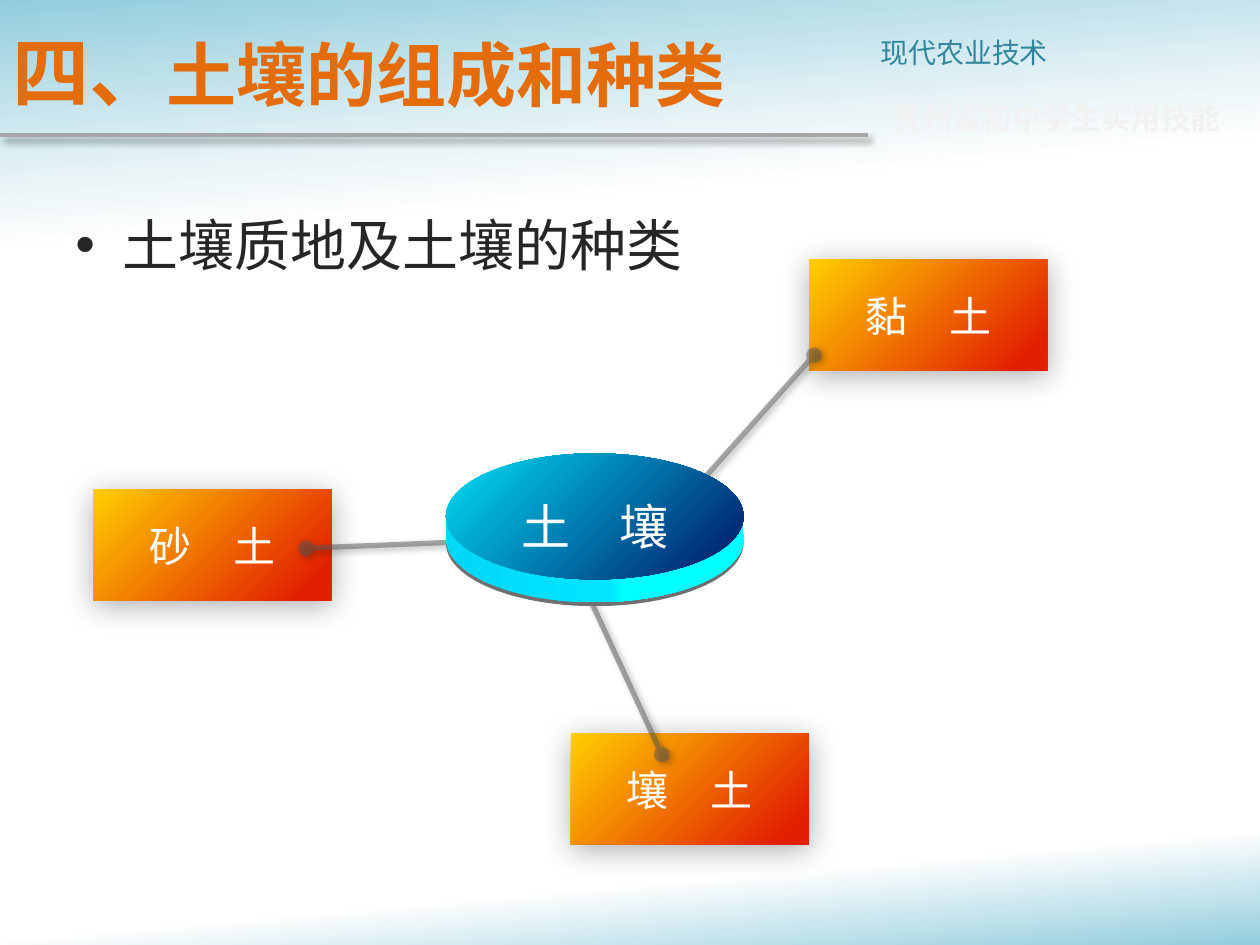
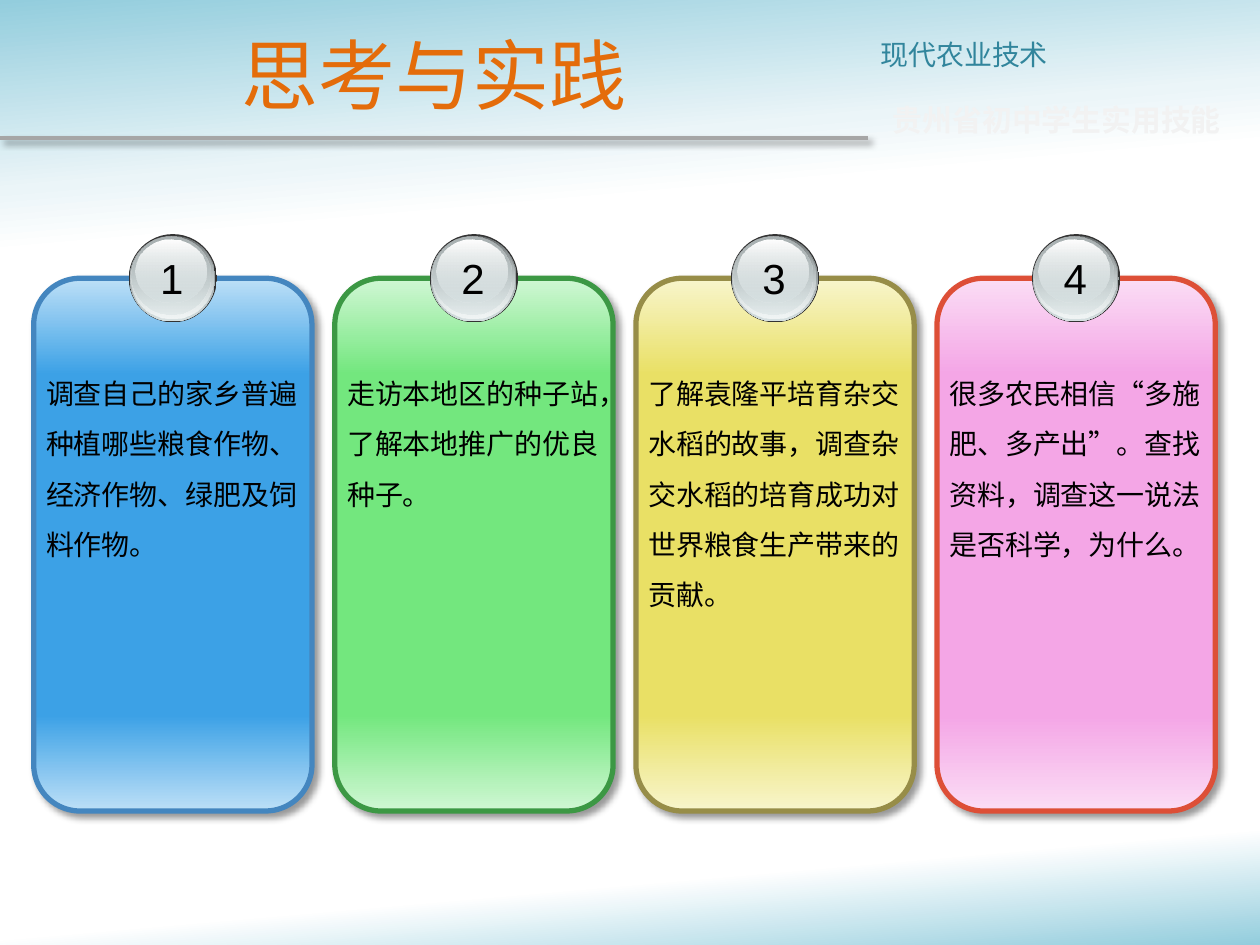
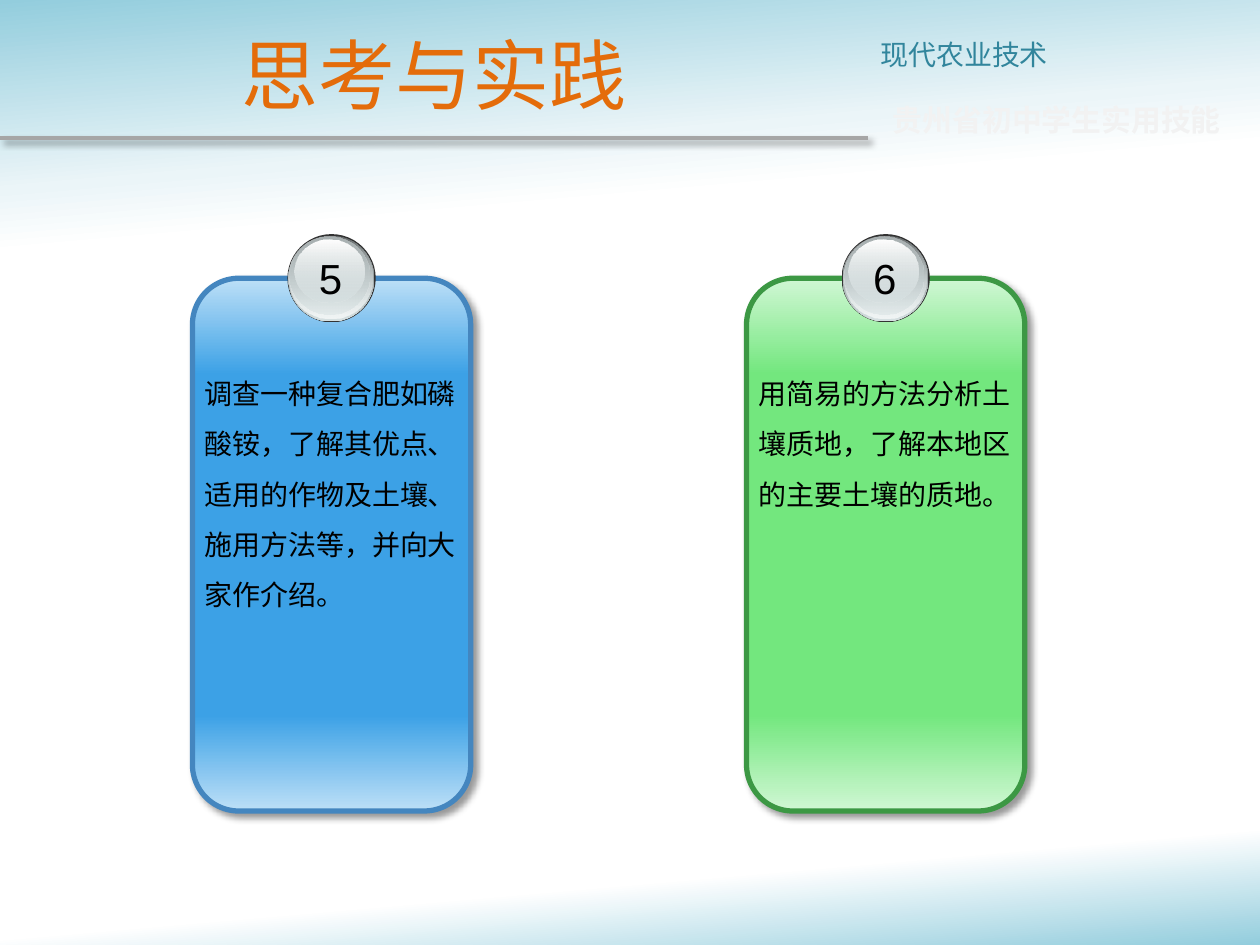
from lxml.etree import SubElement
from pptx import Presentation
from pptx.dml.color import RGBColor
from pptx.enum.shapes import MSO_CONNECTOR, MSO_SHAPE
from pptx.enum.text import MSO_ANCHOR, PP_ALIGN
from pptx.oxml import parse_xml
from pptx.oxml.ns import nsdecls, qn
from pptx.util import Cm, Pt

CJK = "Noto Sans CJK SC"
ORANGE, TEAL, PALE, INK = "E46C0A", "31859C", "F2F2F2", "262626"
WHITE, BLACK, RULE, SPOKE = "FFFFFF", "000000", "A6A6A6", "595959"
SKY = [(0, "93CDDD"), (18, "EBF5F8"), (24, WHITE), (89, WHITE), (100, "93CDDD")]
FIRE = [(0, "FFCF01"), (90, "E22000")]
OCEAN = [(0, "00DFF6"), (90, "002774")]
RIM = [(0, "00D8F8"), (55, "00E4FF"), (60, "00FFFF"), (100, "00FFFF")]
BLUE = ("BDE0F7", "3CA1E6", "4486BF")
GREEN = ("D0F7D4", "73E77E", "3C9844")
YELLOW = ("F8F5CC", "E9E065", "978D48")
PINK = ("FBDDF5", "F4A6E6", "DD4F37")
CARD_W, CARD_H, BADGE = 5.61, 10.74, 1.78
BADGE_LAYERS = [
    (0, 0, 1.78, 1.78, [(0, "333333"), (100, "333333")]),
    (0.02, 0.03, 1.73, 1.73, [(0, "636869"), (100, "D6E1E2")]),
    (0.03, 0.03, 1.68, 1.68, [(0, "D6E1E2", 0), (100, "F1F5F5")]),
    (0.05, 0.05, 1.6, 1.57, [(0, "AAB2B3"), (100, "D6E1E2", 48)]),
    (0.14, 0.1, 1.42, 1.27, [(0, WHITE), (100, "D6E1E2", 38)]),
]


def rgb(value):
    """Turn a hex string into a colour."""
    return RGBColor.from_string(value)


def gradient(fill, holder, stops, angle):
    """Give a shape or background a linear gradient of (position, colour, alpha)."""
    fill.background()
    grad = parse_xml(f'<a:gradFill {nsdecls("a")} rotWithShape="1"><a:gsLst/>'
                     f'<a:lin ang="{angle * 60000}" scaled="0"/></a:gradFill>')
    for pos, color, *alpha in stops:
        gs = SubElement(grad[0], qn("a:gs"), pos=str(pos * 1000))
        clr = SubElement(gs, qn("a:srgbClr"), val=color)
        if alpha:
            SubElement(clr, qn("a:alpha"), val=str(alpha[0] * 1000))
    holder.replace(holder.find(qn("a:noFill")), grad)


def cast_shadow(sp, alpha=0, blur=4, dist=3, angle=45):
    """Replace the theme shadow by a given one, or by none."""
    effects = SubElement(sp.element.spPr, qn("a:effectLst"))
    if alpha:
        shadow = SubElement(effects, qn("a:outerShdw"), blurRad=str(Pt(blur)),
                            dist=str(Pt(dist)), dir=str(angle * 60000),
                            algn="ctr", rotWithShape="0")
        clr = SubElement(shadow, qn("a:srgbClr"), val=BLACK)
        SubElement(clr, qn("a:alpha"), val=str(alpha * 1000))


def add_shape(s, kind, box, stops, angle=90, line=None, shadow=()):
    """Add a gradient-filled preset shape."""
    sp = s.shapes.add_shape(kind, *map(Cm, box))
    gradient(sp.fill, sp.element.spPr, stops, angle)
    if line:
        sp.line.color.rgb = rgb(line)
        sp.line.width = Pt(3)
    else:
        sp.line.fill.background()
    cast_shadow(sp, *shadow)
    return sp


def add_line(s, start, end, color, width, shadow):
    """Add a straight line with a shadow and return it."""
    c = s.shapes.add_connector(MSO_CONNECTOR.STRAIGHT, *map(Cm, start + end))
    c.line.color.rgb = rgb(color)
    c.line.width = Pt(width)
    cast_shadow(c, *shadow)
    return c


def style_run(r, size, color, font=CJK, bold=False):
    """Format one run, East Asian font included."""
    r.font.size = Pt(size)
    r.font.bold = bold
    r.font.color.rgb = rgb(color)
    r.font.name = font
    SubElement(r.font._element, qn("a:ea"), typeface=font)


def add_text(s, box, text, size, color, align=PP_ALIGN.LEFT, font=CJK,
             bold=False, spacing=None, anchor=MSO_ANCHOR.TOP):
    """Add a wrapped text box and return its text frame."""
    tf = s.shapes.add_textbox(*map(Cm, box)).text_frame
    tf.word_wrap = True
    tf.vertical_anchor = anchor
    tf.text = text
    for p in tf.paragraphs:
        p.alignment = align
        p.line_spacing = spacing
        for r in p.runs:
            style_run(r, size, color, font, bold)
    return tf


def header(s, top, title, align=PP_ALIGN.CENTER, bold=False):
    """Draw the title, its rule and the course name."""
    add_line(s, (0, top + 2.6), (17.5, top + 2.6), RULE, 2.25, (40,))
    add_text(s, (17.5, top + 0.46, 7.9, 0.94), "现代农业技术", 16, TEAL)
    add_text(s, (17.75, top + 1.75, 7.65, 0.95), "贵州省初中学生实用技能", 17, PALE, bold=True)
    return add_text(s, (0, top, 17.5, 2.6), title, 44, ORANGE, align,
                    bold=bold, anchor=MSO_ANCHOR.MIDDLE)


def bullet_line(s, box, text):
    """Write one large bulleted line."""
    p = add_text(s, box, text, 32, INK).paragraphs[0]
    pPr = p._p.get_or_add_pPr()
    pPr.set("marL", str(Cm(0.95)))
    pPr.set("indent", str(-Cm(0.95)))
    SubElement(pPr, qn("a:buFont"), typeface="Arial")
    SubElement(pPr, qn("a:buChar"), char="•")


def soil_type(s, left, top, name, hub_end, box_end):
    """Draw one soil type and its spoke to the hub."""
    add_shape(s, MSO_SHAPE.RECTANGLE, (left, top, 4.8, 2.24), FIRE, 45,
              shadow=(33, 17.8, 3, 87))
    c = add_line(s, hub_end, box_end, SPOKE, 3, (50, 4, 2, 45))
    ln = c.element.spPr.find(qn("a:ln"))
    SubElement(ln.find(".//" + qn("a:srgbClr")), qn("a:alpha"), val="50000")
    for end in ("a:headEnd", "a:tailEnd"):
        SubElement(ln, qn(end), type="oval")
    add_text(s, (left + 0.5, top + 0.5, 3.8, 1.27), name, 24, WHITE, PP_ALIGN.CENTER)


def soil_hub(s, left, top):
    """Draw the thick disc in the middle."""
    w, h, depth = 6, 2.54, 0.46
    dark = [(0, "707070"), (100, "707070")]
    add_shape(s, MSO_SHAPE.OVAL, (left, top + depth + 0.08, w, h), dark)
    add_shape(s, MSO_SHAPE.OVAL, (left, top + depth, w, h), RIM, 0)
    add_shape(s, MSO_SHAPE.RECTANGLE, (left, top + h / 2, w, depth), RIM, 0)
    add_shape(s, MSO_SHAPE.OVAL, (left, top, w, h), OCEAN, 45)
    add_text(s, (left, top + 0.74, w, 1.45), "土　壤", 28, WHITE, PP_ALIGN.CENTER)


def soil_map(s, left, top):
    """Draw the three soil types around the hub."""
    for name, box, hub_end, box_end in [
        ("砂　土", (0, 4.63), (8.05, 5.67), (4.29, 5.82)),
        ("黏　土", (14.43, 0), (12.01, 4.75), (14.53, 1.93)),
        ("壤　土", (9.63, 9.55), (9.88, 6.56), (11.46, 9.98)),
    ]:
        box, hub_end, box_end = [(left + x, top + y) for x, y in (box, hub_end, box_end)]
        soil_type(s, *box, name, hub_end, box_end)
    soil_hub(s, left + 7.11, top + 3.91)


def badge(s, left, top, number):
    """Draw a glossy numbered button."""
    for dx, dy, w, h, stops in BADGE_LAYERS:
        add_shape(s, MSO_SHAPE.OVAL, (left + dx, top + dy, w, h), stops)
    tf = add_text(s, (left, top + 0.25, BADGE - 0.04, 1.27), str(number), 24, BLACK,
                  PP_ALIGN.CENTER, "Arial")
    tf.word_wrap = False


def task_card(s, left, top, number, text, colors):
    """Draw one numbered task card."""
    light, full, edge = colors
    stops = [(0, light), (18, full), (82, full), (100, light)]
    add_shape(s, MSO_SHAPE.ROUNDED_RECTANGLE, (left, top, CARD_W, CARD_H), stops,
              line=edge, shadow=(40,))
    add_text(s, (left, top + 1.52, CARD_W, 5.2), text, 16, BLACK, spacing=1.5)
    badge(s, left + (CARD_W - BADGE) / 2, top - 0.89, number)


def soil_slide(s):
    """Build the slide on soil types."""
    p = header(s, 0.13, "四、", PP_ALIGN.LEFT, True).paragraphs[0]
    r = p.add_run()
    r.text = "土壤的组成和种类"
    style_run(r, 40, ORANGE, bold=True)
    bullet_line(s, (1.27, 4.11, 23.04, 3.07), "土壤质地及土壤的种类")
    soil_map(s, 1.88, 5.23)


def task_slide(s, left, step, first, tasks):
    """Build a slide with a row of task cards."""
    for i, (text, colors) in enumerate(tasks):
        task_card(s, left + i * step, 5.61, first + i, text, colors)
    header(s, 0.18, "思考与实践")


def main():
    """Build and save the deck."""
    prs = Presentation()
    prs.slide_width, prs.slide_height = Cm(25.4), Cm(19.05)
    master = prs.slide_master
    fill = master.background.fill
    fill.background()
    gradient(fill, master.element.find(".//" + qn("p:bgPr")), SKY, 85)
    soil, tasks, more_tasks = [prs.slides.add_slide(prs.slide_layouts[6]) for _ in range(3)]
    soil_slide(soil)
    task_slide(tasks, 0.68, 6.07, 1, [
        ("调查自己的家乡普遍种植哪些粮食作物、经济作物、绿肥及饲\n料作物。", BLUE),
        ("走访本地区的种子站，了解本地推广的优良种子。", GREEN),
        ("了解袁隆平培育杂交水稻的故事，调查杂交水稻的培育成功对\n世界粮食生产带来的贡献。", YELLOW),
        ("很多农民相信“多施肥、多产出”。查找资料，调查这一说法是否科学，为什么。", PINK),
    ])
    task_slide(more_tasks, 3.88, 11.17, 5, [
        ("调查一种复合肥如磷酸铵，了解其优点、适用的作物及土壤、施用方法等，并向大家作介绍。", BLUE),
        ("用简易的方法分析土壤质地，了解本地区的主要土壤的质地。", GREEN),
    ])
    prs.save("out.pptx")


if __name__ == "__main__":
    main()
